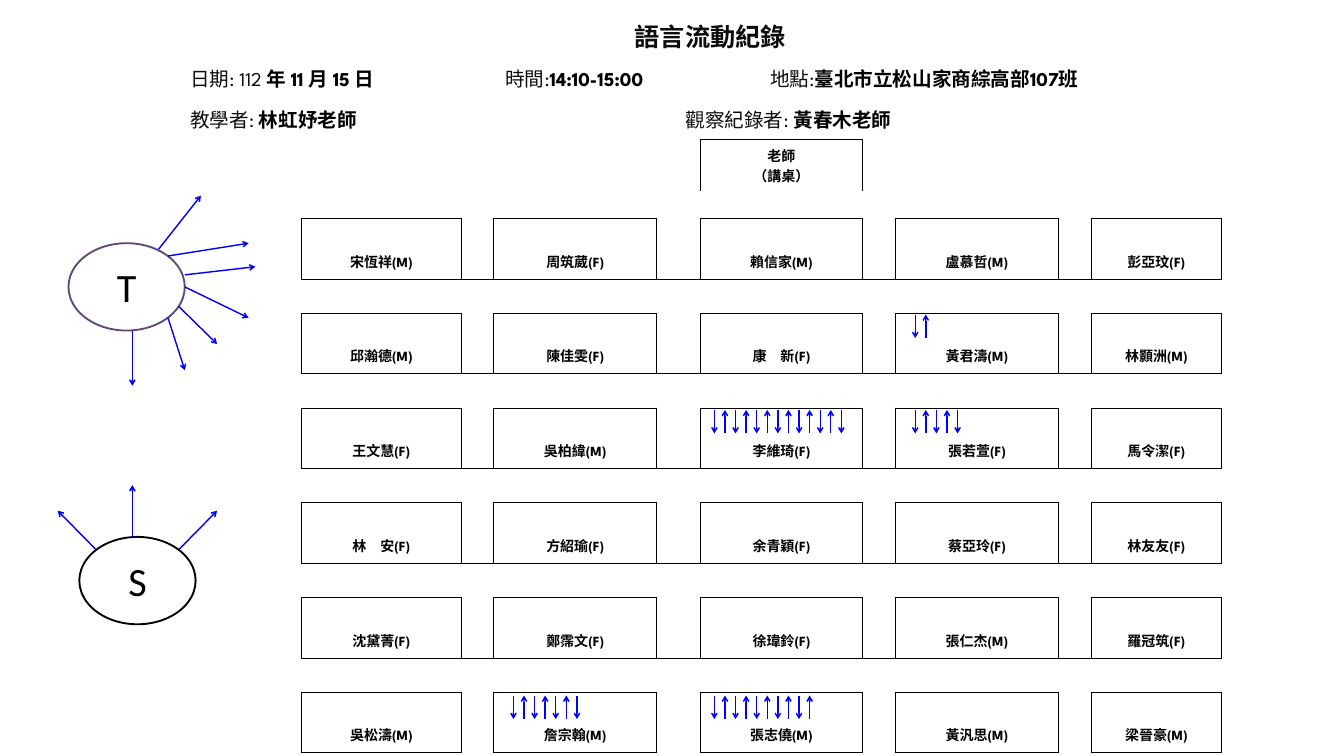
from lxml import etree
from pptx import Presentation
from pptx.dml.color import RGBColor
from pptx.enum.shapes import MSO_CONNECTOR, MSO_SHAPE
from pptx.enum.text import MSO_ANCHOR, PP_ALIGN
from pptx.oxml.ns import qn
from pptx.util import Pt

STRAIGHT = MSO_CONNECTOR.STRAIGHT
OVAL = MSO_SHAPE.FLOWCHART_CONNECTOR
CENTER = PP_ALIGN.CENTER
MIDDLE, BOTTOM = MSO_ANCHOR.MIDDLE, MSO_ANCHOR.BOTTOM

BLACK, INK, WHITE, PURPLE, BLUE = "000000", "0D0D0D", "FFFFFF", "5F4A78", "0000FF"
LATIN, CJK = "League Spartan", "Noto Sans CJK SC"
PLAIN_TABLE = "{2D5ABB26-0587-4C30-8999-92F81FD0307C}"
SIDES = "LRTB"

TITLE = {"name": CJK, "size": Pt(27), "bold": True, "color": INK}
LABEL = {"name": LATIN, "size": Pt(21), "bold": False, "color": INK}
VALUE = {**LABEL, "bold": True, "color": BLACK}
SEAT = {**VALUE, "size": Pt(15)}
ROLE = {"name": "Calibri", "size": Pt(43), "color": BLACK}

HEADER_COLUMNS = [337.7, 193, 90.7, 522]
SEAT_COLUMNS = [170.6, 35.3, 174.2, 46.8, 174.2, 35.3, 174.2, 35.3, 139.7]
DESK_COLUMN = 4

STUDENTS = [
    ["宋恆祥(M)", "周筑葳(F)", "賴信家(M)", "盧慕哲(M)", "彭亞玟(F)"],
    ["邱瀚德(M)", "陳佳雯(F)", "康　新(F)", "黃君濤(M)", "林顥洲(M)"],
    ["王文慧(F)", "吳柏緯(M)", "李維琦(F)", "張若萱(F)", "馬令潔(F)"],
    ["林　安(F)", "方紹瑜(F)", "余青穎(F)", "蔡亞玲(F)", "林友友(F)"],
    ["沈黛菁(F)", "鄭霈文(F)", "徐瑋鈴(F)", "張仁杰(M)", "羅冠筑(F)"],
    ["吳松濤(M)", "詹宗翰(M)", "張志僥(M)", "黃汎思(M)", "梁晉豪(M)"],
]

# First column and span of each header cell, with its label and value
HEADER_FIELDS = [
    (1, 0, 1, "日期: 112 ", "年 11 月 15 日"),
    (1, 1, 2, "時間:", "14:10-15:00"),
    (1, 3, 1, "地點:", "臺北市立松山家商綜高部107班"),
    (2, 0, 2, "教學者: ", "林虹妤老師"),
    (2, 2, 2, "觀察紀錄者: ", "黃春木老師"),
]

# Left, top and number of exchanges; they alternate, starting downwards
EXCHANGES = [(980.6, 337, 2), (765.4, 439.2, 13), (980.6, 439.2, 5),
             (550.1, 745.2, 7), (765.4, 745.2, 10)]
EXCHANGE_STEP, EXCHANGE_LENGTH = 11.34, 25.2

ROLE_ARROWS = [
    (141.8, 354.2, 141.8, 413.3), (180, 340.6, 198, 396.7),
    (191.5, 328.3, 232.6, 368.6), (198, 307.4, 266.4, 340.6),
    (198, 294.5, 273.6, 285.8), (180, 274.3, 266.4, 260.6),
    (169.9, 267.1, 215.3, 209.5), (141.8, 575.3, 141.8, 519.8),
    (191.5, 589, 232.6, 547.2), (103, 589, 61.9, 547.2),
]


def rgb(value):
    return RGBColor.from_string(value)


def set_values(target, values):
    for name, value in values.items():
        setattr(target, name, value)


def add_span(para, text, style):
    span = para.add_run()
    span.text = text
    values = dict(style)
    span.font.color.rgb = rgb(values.pop("color"))
    set_values(span.font, values)
    east_asian = etree.SubElement(span.font._element, qn("a:ea"))
    east_asian.set("typeface", CJK)


def set_margins(target, across, top, bottom):
    set_values(target, {"margin_left": Pt(across), "margin_right": Pt(across),
                        "margin_top": Pt(top), "margin_bottom": Pt(bottom)})


def set_borders(cell, shown):
    """Rule the sides named in shown; leave the others open."""
    properties = cell._tc.get_or_add_tcPr()
    for side in SIDES:
        border = etree.SubElement(properties, qn(f"a:ln{side}"), w=str(Pt(1)))
        if side in shown:
            fill = etree.SubElement(border, qn("a:solidFill"))
            etree.SubElement(fill, qn("a:srgbClr"), val=BLACK)
        else:
            etree.SubElement(border, qn("a:noFill"))


def style_cell(cell, shown=""):
    set_borders(cell, shown)
    cell.fill.background()
    set_margins(cell, 0, 0, 0)


def add_plain_table(page, left, top, columns, rows):
    frame = page.shapes.add_table(len(rows), len(columns), Pt(left), Pt(top),
                                  Pt(sum(columns)), Pt(sum(rows)))
    table = frame.table
    set_values(table, {"first_row": False, "horz_banding": False})
    table._tbl.tblPr.find(qn("a:tableStyleId")).text = PLAIN_TABLE
    for column, width in zip(table.columns, columns):
        column.width = Pt(width)
    for row, height in zip(table.rows, rows):
        row.height = Pt(height)
    return table


def merge_across(table, row, first, count):
    cell = table.cell(row, first)
    if count > 1:
        cell.merge(table.cell(row, first + count - 1))
    return cell


def add_header(page):
    table = add_plain_table(page, 189.4, 13.7, HEADER_COLUMNS, [44] * 3)
    for cell in table.iter_cells():
        style_cell(cell)
        set_margins(cell, 14.4, 5, 5)
    para = merge_across(table, 0, 0, len(HEADER_COLUMNS)).text_frame.paragraphs[0]
    para.alignment = CENTER
    add_span(para, "語言流動紀錄", TITLE)
    for row, first, count, label, value in HEADER_FIELDS:
        para = merge_across(table, row, first, count).text_frame.paragraphs[0]
        add_span(para, label, LABEL)
        add_span(para, value, VALUE)


def fill_seat(cell, lines):
    set_margins(cell, 14.4, 5.8, 5.8)
    box = cell.text_frame
    for index, line in enumerate(lines):
        para = box.add_paragraph() if index else box.paragraphs[0]
        para.alignment = CENTER
        add_span(para, line, SEAT)


def seat_borders(row, column):
    """Sides ruled for a cell: desk row, spacer rows, then seats and aisles."""
    if row == 0:
        return {0: "R", DESK_COLUMN: "LRT", DESK_COLUMN + 1: "L"}.get(column, "")
    if row % 2:
        return "T" if row > 1 else ""
    return "LR" if column % 2 else SIDES


def add_seating(page):
    rows = [48.2, 29.5] + [64.8, 36.7] * (len(STUDENTS) - 1) + [64.8]
    table = add_plain_table(page, 323.3, 149.8, SEAT_COLUMNS, rows)
    for row in range(len(rows)):
        for column in range(len(SEAT_COLUMNS)):
            style_cell(table.cell(row, column), seat_borders(row, column))
        if row % 2:
            merge_across(table, row, 0, len(SEAT_COLUMNS))
    for first in (0, DESK_COLUMN + 1):
        merge_across(table, 0, first, 4)
    fill_seat(table.cell(0, DESK_COLUMN), ["老師", "（講桌）"])
    for line, names in enumerate(STUDENTS):
        for place, name in enumerate(names):
            cell = table.cell(2 + 2 * line, 2 * place)
            fill_seat(cell, [name])
            set_values(cell, {"vertical_anchor": BOTTOM, "margin_bottom": Pt(8.5)})


def add_role(page, left, top, letter, outline):
    shape = page.shapes.add_shape(OVAL, Pt(left), Pt(top), Pt(124.6), Pt(93.6))
    shape.shadow.inherit = False
    shape.fill.solid()
    shape.fill.fore_color.rgb = rgb(WHITE)
    shape.line.color.rgb = rgb(outline)
    shape.line.width = Pt(2)
    box = shape.text_frame
    box.vertical_anchor = MIDDLE
    set_margins(box, 13, 6.5, 6.5)
    para = box.paragraphs[0]
    para.alignment = CENTER
    add_span(para, letter, ROLE)


def add_arrow(page, *ends):
    arrow = page.shapes.add_connector(STRAIGHT, *map(Pt, ends))
    arrow.line.color.rgb = rgb(BLUE)
    arrow.line.width = Pt(1.5)
    etree.SubElement(arrow.line._get_or_add_ln(), qn("a:tailEnd"), type="arrow")
    etree.SubElement(arrow._element.spPr, qn("a:effectLst"))


def add_exchanges(page, left, top, count):
    for index in range(count):
        x = left + index * EXCHANGE_STEP
        start, end = top, top + EXCHANGE_LENGTH
        if index % 2:
            start, end = end, start
        add_arrow(page, x, start, x, end)


def main():
    deck = Presentation()
    set_values(deck, {"slide_width": Pt(1440), "slide_height": Pt(810)})
    page = deck.slides.add_slide(deck.slide_layouts[6])
    add_seating(page)
    add_role(page, 73.4, 260.6, "T", PURPLE)
    add_role(page, 85, 575.3, "S", BLACK)
    add_header(page)
    for ends in ROLE_ARROWS:
        add_arrow(page, *ends)
    for exchange in EXCHANGES:
        add_exchanges(page, *exchange)
    deck.save("out.pptx")


if __name__ == "__main__":
    main()
